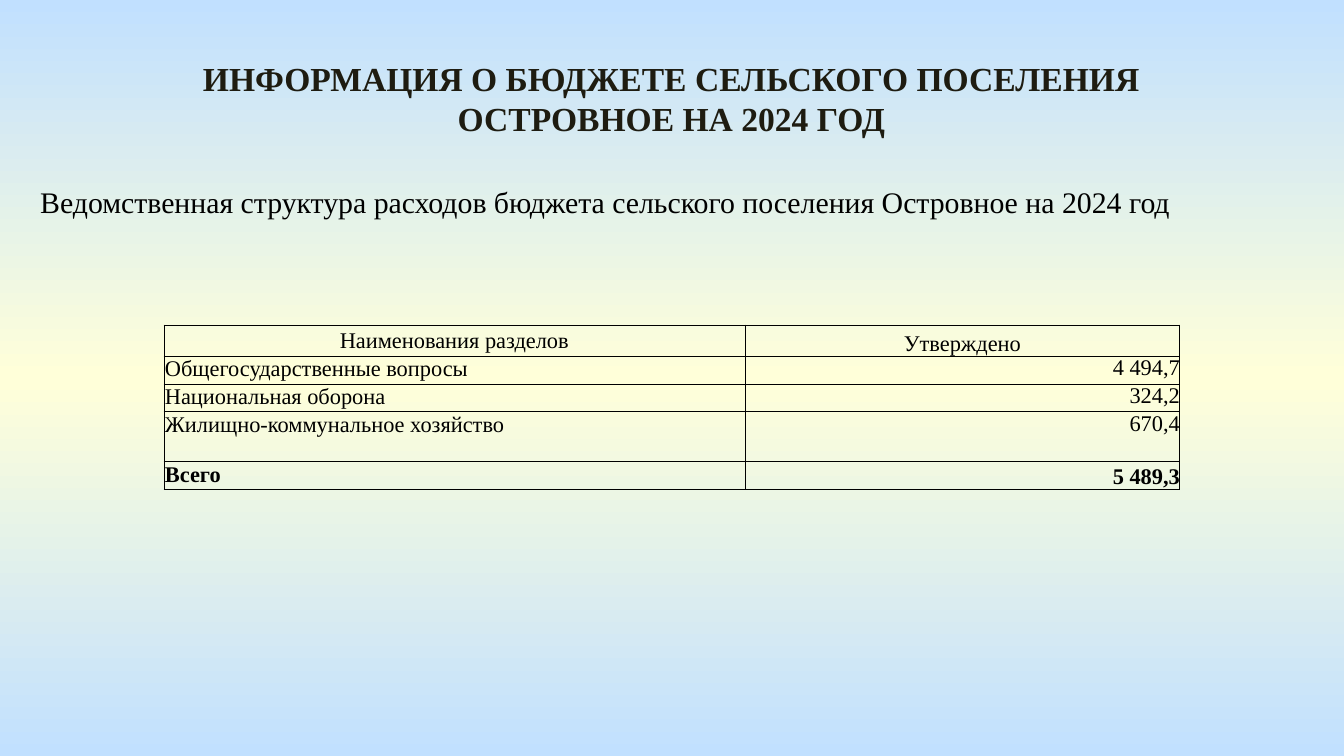
from copy import deepcopy
from dataclasses import dataclass

from lxml import etree
from pptx import Presentation
from pptx.dml.color import RGBColor
from pptx.enum.text import MSO_ANCHOR, MSO_AUTO_SIZE, PP_ALIGN
from pptx.oxml.ns import qn
from pptx.slide import Slide
from pptx.table import _Cell
from pptx.text.text import TextFrame
from pptx.util import Emu, Pt

LEFT, CENTER, RIGHT, JUSTIFY = PP_ALIGN.LEFT, PP_ALIGN.CENTER, PP_ALIGN.RIGHT, PP_ALIGN.JUSTIFY
TOP, MIDDLE, BOTTOM = MSO_ANCHOR.TOP, MSO_ANCHOR.MIDDLE, MSO_ANCHOR.BOTTOM
GROW = MSO_AUTO_SIZE.SHAPE_TO_FIT_TEXT

EMU_PER_PX = 914400 / 134.4
FONT = "Times New Roman"
BLACK = "000000"
TITLE_COLOR = "1E1C11"
BACKGROUND_COLORS = ["C1E0FF", "FFFFD9", "C1E0FF"]
BORDER_WIDTH = Pt(0.5)
COLUMN_WIDTHS = [581, 435]


@dataclass
class Box:
    left: int
    top: int
    width: int
    height: int


@dataclass
class BudgetRow:
    name: str
    amount: str
    height: int = 28
    name_anchor: MSO_ANCHOR = TOP
    amount_anchor: MSO_ANCHOR = TOP
    bold: bool = False
    header: bool = False


ROWS = [
    BudgetRow("Наименования разделов", "Утверждено", 31, MIDDLE, BOTTOM, header=True),
    BudgetRow("Общегосударственные вопросы", "4 494,7"),
    BudgetRow("Национальная оборона", "324,2"),
    BudgetRow("Жилищно-коммунальное хозяйство", "670,4", 50),
    BudgetRow("Всего", "5 489,3", amount_anchor=BOTTOM, bold=True),
]


def px(length: int) -> Emu:
    return Emu(round(length * EMU_PER_PX))


def color(value: str) -> RGBColor:
    return RGBColor.from_string(value)


def write(frame: TextFrame, text: str, *, size: int, fill: str = BLACK,
          bold: bool = False, align: PP_ALIGN = LEFT) -> None:
    paragraph = frame.paragraphs[0]
    paragraph.alignment = align
    run = paragraph.add_run()
    run.text = text
    run.font.name = FONT
    run.font.size = Pt(size)
    run.font.bold = bold
    run.font.color.rgb = color(fill)


def paint_background(slide: Slide, colors: list[str]) -> None:
    fill = slide.background.fill
    fill.gradient()
    fill.gradient_angle = 270
    stop_list = next(slide.element.iter(qn("a:gsLst")))
    while len(stop_list) < len(colors):
        stop_list.append(deepcopy(stop_list[0]))
    for index, (stop, value) in enumerate(zip(fill.gradient_stops, colors)):
        stop.position = index / (len(colors) - 1)
        stop.color.rgb = color(value)


def add_text(slide: Slide, box: Box, text: str, **text_format) -> None:
    shape = slide.shapes.add_textbox(px(box.left), px(box.top), px(box.width), px(box.height))
    shape.text_frame.word_wrap = True
    shape.text_frame.auto_size = GROW
    write(shape.text_frame, text, **text_format)


def add_borders(cell: _Cell) -> None:
    properties = cell._tc.get_or_add_tcPr()
    for side in ("a:lnL", "a:lnR", "a:lnT", "a:lnB"):
        line = etree.SubElement(properties, qn(side), w=str(BORDER_WIDTH))
        solid = etree.SubElement(line, qn("a:solidFill"))
        etree.SubElement(solid, qn("a:srgbClr"), val=BLACK)


def fill_cell(cell: _Cell, text: str, anchor: MSO_ANCHOR, inset: int, **text_format) -> None:
    cell.margin_left = cell.margin_right = cell.margin_top = px(inset)
    cell.margin_bottom = 0
    cell.vertical_anchor = anchor
    add_borders(cell)
    cell.fill.background()
    write(cell.text_frame, text, size=12, **text_format)


def add_budget_table(slide: Slide, left: int, top: int, rows: list[BudgetRow]) -> None:
    height = sum(row.height for row in rows)
    table = slide.shapes.add_table(len(rows), len(COLUMN_WIDTHS), px(left), px(top),
                                   px(sum(COLUMN_WIDTHS)), px(height)).table
    table.first_row = False
    table.horz_banding = False
    for column, width in zip(table.columns, COLUMN_WIDTHS):
        column.width = px(width)
    for index, row in enumerate(rows):
        table.rows[index].height = px(row.height)
        fill_cell(table.cell(index, 0), row.name, row.name_anchor, 1,
                  bold=row.bold, align=CENTER if row.header else LEFT)
        fill_cell(table.cell(index, 1), row.amount, row.amount_anchor, 1 if row.header else 0,
                  bold=row.bold, align=CENTER if row.header else RIGHT)


def main() -> None:
    presentation = Presentation()
    presentation.slide_width = px(1344)
    presentation.slide_height = px(756)
    slide = presentation.slides.add_slide(presentation.slide_layouts[6])
    paint_background(slide, BACKGROUND_COLORS)
    add_text(slide, Box(152, 51, 1039, 95),
             "ИНФОРМАЦИЯ О БЮДЖЕТЕ СЕЛЬСКОГО ПОСЕЛЕНИЯ ОСТРОВНОЕ НА 2024 ГОД",
             size=18, fill=TITLE_COLOR, bold=True, align=CENTER)
    add_text(slide, Box(27, 177, 1292, 86),
             "Ведомственная структура расходов бюджета сельского поселения Островное на 2024 год",
             size=16, align=JUSTIFY)
    add_budget_table(slide, 164, 325, ROWS)
    presentation.save("out.pptx")


if __name__ == "__main__":
    main()
